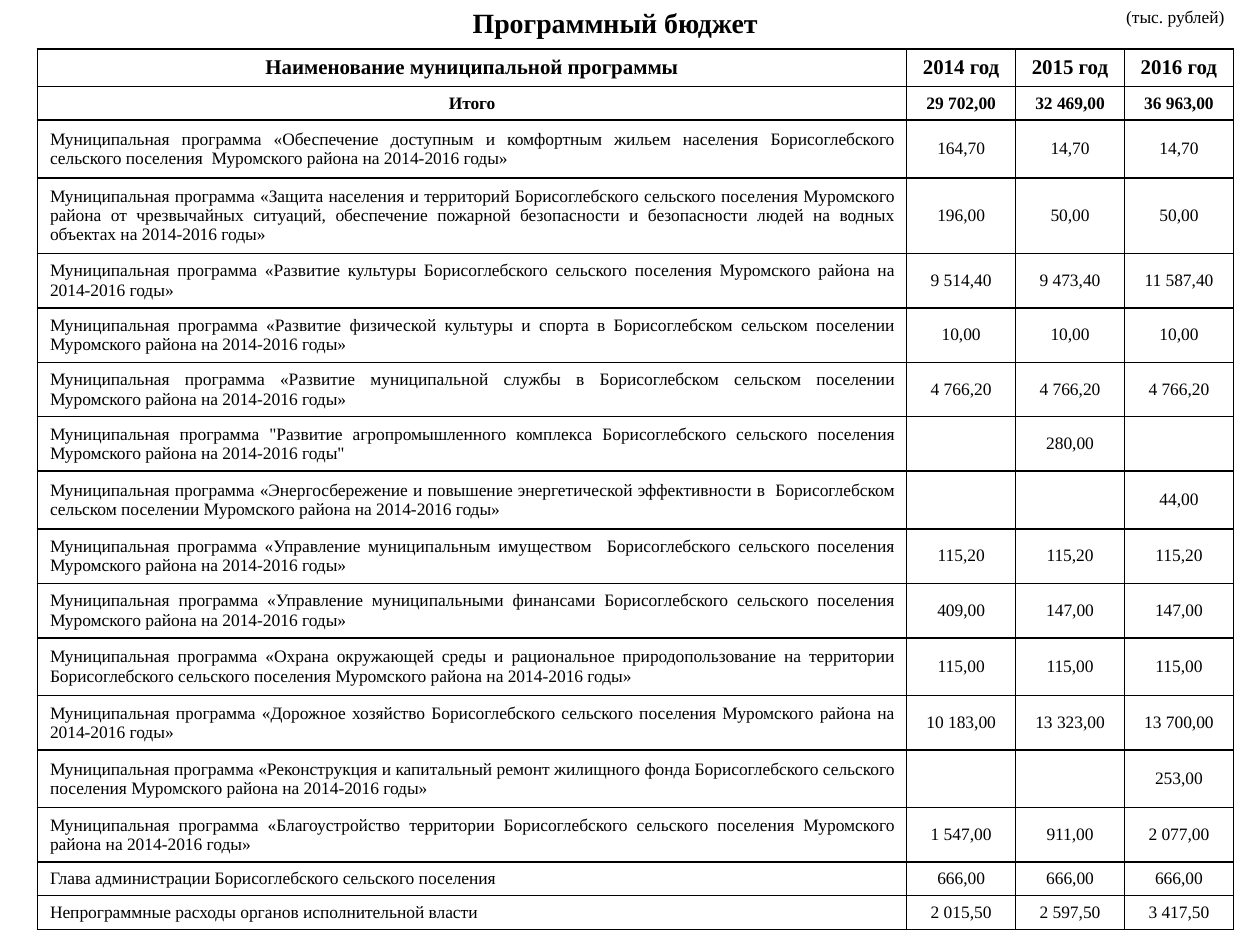
from dataclasses import dataclass

from lxml import etree
from pptx import Presentation
from pptx import util as u
from pptx.dml.color import RGBColor
from pptx.enum import text
from pptx.oxml import ns


@dataclass(frozen=True)
class Theme:
    font: str = "Times New Roman"
    ink: str = "000000"
    title_size: float = 16
    header_size: float = 12
    body_size: float = 10
    border: float = 1


class BudgetPage:
    def __init__(self, deck, theme):
        self.theme = theme
        self.page = deck.slides.add_slide(deck.slide_layouts[6])

    def style(self, para, size, bold=False, align=text.PP_ALIGN.CENTER):
        para.alignment = align
        for span in para.runs:
            span.font.name = self.theme.font
            span.font.size = u.Pt(size)
            span.font.bold = bold
            span.font.color.rgb = RGBColor.from_string(self.theme.ink)

    def label(self, words, left, top, width, height, size, bold=False):
        box = self.page.shapes.add_textbox(u.Pt(left), u.Pt(top), u.Pt(width), u.Pt(height))
        frame = box.text_frame
        frame.word_wrap = True
        frame.text = words
        self.style(frame.paragraphs[0], size, bold)

    def outline(self, cell):
        properties = cell._tc.get_or_add_tcPr()
        for side in ("a:lnL", "a:lnR", "a:lnT", "a:lnB"):
            line = etree.SubElement(properties, ns.qn(side), w=str(u.Pt(self.theme.border)))
            fill = etree.SubElement(line, ns.qn("a:solidFill"))
            etree.SubElement(fill, ns.qn("a:srgbClr"), val=self.theme.ink)

    def table(self, rows, left, top, widths, heights):
        frame = self.page.shapes.add_table(
            len(rows), len(widths), u.Pt(left), u.Pt(top), u.Pt(sum(widths)), u.Pt(sum(heights)))
        table = frame.table
        table.first_row = table.horz_banding = False
        for column, width in zip(table.columns, widths):
            column.width = u.Pt(width)
        for row_index, (row, height) in enumerate(zip(rows, heights)):
            table.rows[row_index].height = u.Pt(height)
            size = self.theme.header_size if row_index == 0 else self.theme.body_size
            heading = row_index < 2
            for column_index, words in enumerate(row):
                cell = table.cell(row_index, column_index)
                self.outline(cell)
                cell.fill.background()
                cell.vertical_anchor = text.MSO_ANCHOR.MIDDLE
                cell.text = words
                justified = column_index == 0 and not heading
                align = text.PP_ALIGN.JUSTIFY if justified else text.PP_ALIGN.CENTER
                self.style(cell.text_frame.paragraphs[0], size, heading, align)


HEADER, SINGLE, DOUBLE, ROOMY, TRIPLE = 21.2, 19.3, 31.25, 33.1, 43

BUDGET = [
    (HEADER, "Наименование муниципальной программы", "2014 год", "2015 год", "2016 год"),
    (SINGLE, "Итого", "29 702,00", "32 469,00", "36 963,00"),
    (ROOMY, "Муниципальная программа «Обеспечение доступным и комфортным жильем населения "
     "Борисоглебского сельского поселения  Муромского района на 2014-2016 годы»",
     "164,70", "14,70", "14,70"),
    (TRIPLE, "Муниципальная программа «Защита населения и территорий Борисоглебского сельского "
     "поселения Муромского района от чрезвычайных ситуаций, обеспечение пожарной безопасности "
     "и безопасности людей на водных объектах на 2014-2016 годы»",
     "196,00", "50,00", "50,00"),
    (DOUBLE, "Муниципальная программа «Развитие культуры Борисоглебского сельского поселения "
     "Муромского района на 2014-2016 годы»",
     "9 514,40", "9 473,40", "11 587,40"),
    (DOUBLE, "Муниципальная программа «Развитие физической культуры и спорта в Борисоглебском "
     "сельском поселении Муромского района на 2014-2016 годы»",
     "10,00", "10,00", "10,00"),
    (DOUBLE, "Муниципальная программа «Развитие муниципальной службы в Борисоглебском "
     "сельском поселении Муромского района на 2014-2016 годы»",
     "4 766,20", "4 766,20", "4 766,20"),
    (DOUBLE, "Муниципальная программа \"Развитие агропромышленного комплекса Борисоглебского "
     "сельского поселения Муромского района на 2014-2016 годы\"",
     "", "280,00", ""),
    (ROOMY, "Муниципальная программа «Энергосбережение и повышение энергетической эффективности "
     "в  Борисоглебском сельском поселении Муромского района на 2014-2016 годы»",
     "", "", "44,00"),
    (DOUBLE, "Муниципальная программа «Управление муниципальным имуществом  Борисоглебского "
     "сельского поселения Муромского района на 2014-2016 годы»",
     "115,20", "115,20", "115,20"),
    (DOUBLE, "Муниципальная программа «Управление муниципальными финансами Борисоглебского "
     "сельского поселения Муромского района на 2014-2016 годы»",
     "409,00", "147,00", "147,00"),
    (ROOMY, "Муниципальная программа «Охрана окружающей среды и рациональное природопользование "
     "на территории Борисоглебского сельского поселения Муромского района на 2014-2016 годы»",
     "115,00", "115,00", "115,00"),
    (DOUBLE, "Муниципальная программа «Дорожное хозяйство Борисоглебского сельского поселения "
     "Муромского района на 2014-2016 годы»",
     "10 183,00", "13 323,00", "13 700,00"),
    (ROOMY, "Муниципальная программа «Реконструкция и капитальный ремонт жилищного фонда "
     "Борисоглебского сельского поселения Муромского района на 2014-2016 годы»",
     "", "", "253,00"),
    (DOUBLE, "Муниципальная программа «Благоустройство территории Борисоглебского сельского "
     "поселения Муромского района на 2014-2016 годы»",
     "1 547,00", "911,00", "2 077,00"),
    (SINGLE, "Глава администрации Борисоглебского сельского поселения",
     "666,00", "666,00", "666,00"),
    (SINGLE, "Непрограммные расходы органов исполнительной власти",
     "2 015,50", "2 597,50", "3 417,50"),
]


def main():
    deck = Presentation()
    deck.slide_width, deck.slide_height = u.Pt(722.88), u.Pt(540)
    theme = Theme()
    page = BudgetPage(deck, theme)
    page.label("Программный бюджет", 88.5, 0, 529, 26.6, theme.title_size, bold=True)
    page.label("(тыс. рублей)", 625.7, 0, 97.2, 19.4, theme.body_size)
    heights = [height for height, *_ in BUDGET]
    rows = [row for _, *row in BUDGET]
    page.table(rows, 21.5, 28.1, [498.7] + [62.5] * 3, heights)
    deck.save("out.pptx")


if __name__ == "__main__":
    main()
